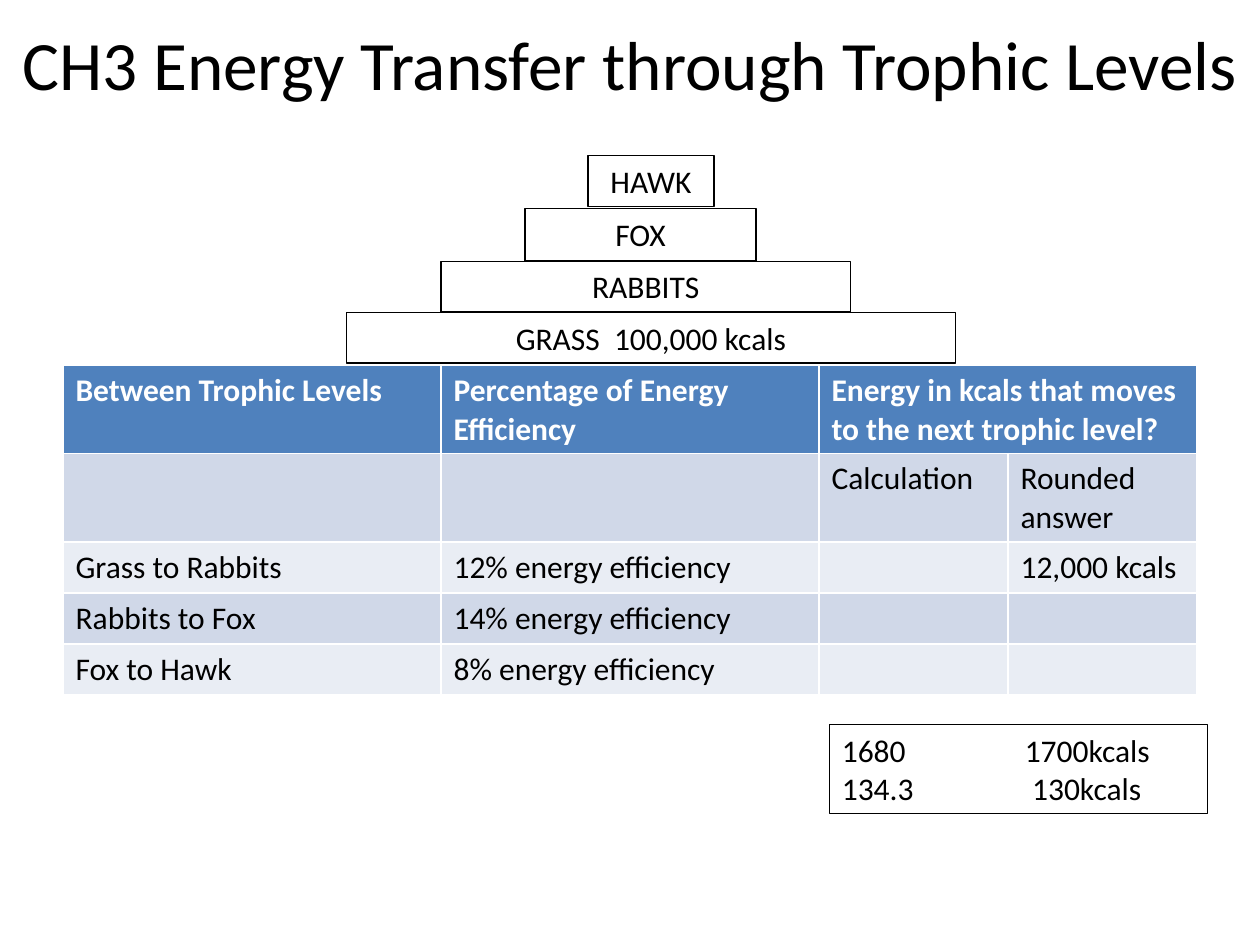
from dataclasses import dataclass

from lxml.etree import SubElement
from pptx import Presentation
from pptx.dml.color import RGBColor as Color
from pptx.enum.text import MSO_ANCHOR as Anchor, MSO_AUTO_SIZE as AutoSize, PP_ALIGN as Align
from pptx.oxml.ns import qn
from pptx.util import Pt


@dataclass(frozen=True)
class Theme:
    font: str = "Calibri"
    title_size: float = 39.6
    body_size: float = 18
    line_width: float = 0.75
    ink: str = "000000"
    paper: str = "FFFFFF"
    header: str = "4F81BD"
    bands: tuple = ("D0D8E8", "E9EDF4")


class SlideBuilder:
    def __init__(self, slide, theme):
        self.slide = slide
        self.theme = theme

    def add_text(self, paragraph, text, size=None, color=None, bold=False):
        run = paragraph.add_run()
        run.text = text
        run.font.name = self.theme.font
        run.font.size = Pt(size or self.theme.body_size)
        run.font.bold = bold
        run.font.color.rgb = Color.from_string(color or self.theme.ink)

    def text_box(self, left, top, width, height):
        shape = self.slide.shapes.add_textbox(Pt(left), Pt(top), Pt(width), Pt(height))
        shape.text_frame.word_wrap = True
        return shape

    def title(self, text, width, height):
        frame = self.text_box(0, 0, width, height).text_frame
        frame.vertical_anchor = Anchor.MIDDLE
        paragraph = frame.paragraphs[0]
        paragraph.alignment = Align.CENTER
        self.add_text(paragraph, text, self.theme.title_size)

    def outlined_box(self, left, top, width, height):
        shape = self.text_box(left, top, width, height)
        shape.line.color.rgb = Color.from_string(self.theme.ink)
        shape.line.width = Pt(self.theme.line_width)
        shape.text_frame.auto_size = AutoSize.SHAPE_TO_FIT_TEXT
        return shape.text_frame

    def level(self, text, left, top, width, height):
        paragraph = self.outlined_box(left, top, width, height).paragraphs[0]
        paragraph.alignment = Align.CENTER
        self.add_text(paragraph, text)

    def answers(self, lines, left, top, width, height):
        frame = self.outlined_box(left, top, width, height)
        for index, (calculation, rounded, tab) in enumerate(lines):
            paragraph = frame.add_paragraph() if index else frame.paragraphs[0]
            self.add_text(paragraph, f"{calculation}\t{rounded}")
            properties = paragraph._p.get_or_add_pPr()
            tab_list = SubElement(properties, qn("a:tabLst"))
            SubElement(tab_list, qn("a:tab"), pos=str(Pt(tab)), algn="l")

    def table(self, rows, left, top, column_widths, row_height):
        table = self.slide.shapes.add_table(
            len(rows), len(column_widths), Pt(left), Pt(top),
            Pt(sum(column_widths)), Pt(row_height * len(rows))).table
        for column, width in zip(table.columns, column_widths):
            column.width = Pt(width)
        for row_index, row in enumerate(rows):
            is_header = row_index == 0
            fill = self.theme.header if is_header else self.theme.bands[(row_index - 1) % 2]
            color = self.theme.paper if is_header else self.theme.ink
            for column_index, text in enumerate(row):
                cell = table.cell(row_index, column_index)
                cell.fill.solid()
                cell.fill.fore_color.rgb = Color.from_string(fill)
                if text:
                    self.add_text(cell.text_frame.paragraphs[0], text, color=color, bold=is_header)
        return table


def main():
    presentation = Presentation()
    presentation.slide_width = Pt(720)
    presentation.slide_height = Pt(540)
    slide = presentation.slides.add_slide(presentation.slide_layouts[6])
    builder = SlideBuilder(slide, Theme())

    builder.title("CH3 Energy Transfer through Trophic Levels", 720, 72)

    energy_table = builder.table([
        ("Between Trophic Levels", "Percentage of Energy Efficiency",
         "Energy in kcals that moves to the next trophic level?", ""),
        ("", "", "Calculation", "Rounded answer"),
        ("Grass to Rabbits", "12% energy efficiency", "", "12,000 kcals"),
        ("Rabbits to Fox", "14% energy efficiency", "", ""),
        ("Fox to Hawk", "8% energy efficiency", "", ""),
    ], 36, 208.8, (216, 216, 108, 108), 29.2)
    energy_table.cell(0, 2).merge(energy_table.cell(0, 3))

    for text, left, top, width, height in (
        ("GRASS  100,000 kcals", 198, 178.5, 348, 29),
        ("RABBITS", 252, 149.25, 234, 29),
        ("FOX", 300, 119.25, 132, 30),
        ("HAWK", 336, 89, 72, 29),
    ):
        builder.level(text, left, top, width, height)

    builder.answers([("1680", "1700kcals", 104.5), ("134.3", "130kcals", 108.75)],
                    474, 414, 216, 51)

    presentation.save("out.pptx")


if __name__ == "__main__":
    main()
